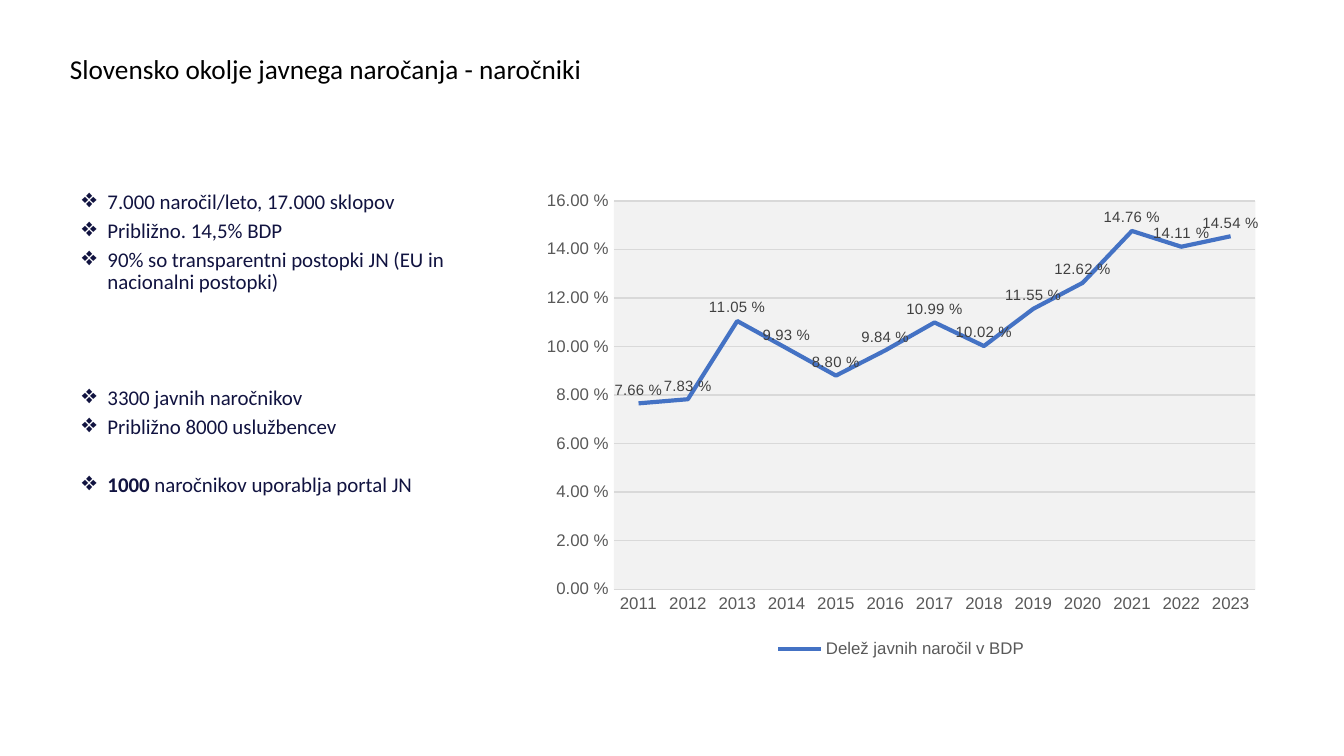
"""Build a slide on Slovenian public procurement with bullets and a line chart."""
from dataclasses import dataclass

from lxml import etree
from pptx import Presentation
from pptx.chart.data import CategoryChartData
from pptx.dml.color import RGBColor
from pptx.enum.chart import XL_CHART_TYPE, XL_LABEL_POSITION, XL_LEGEND_POSITION, XL_MARKER_STYLE, XL_TICK_MARK
from pptx.enum.text import MSO_ANCHOR
from pptx.oxml import parse_xml
from pptx.oxml.ns import nsdecls, qn
from pptx.util import Inches, Pt

LINE = XL_CHART_TYPE.LINE
ABOVE = XL_LABEL_POSITION.ABOVE
BOTTOM = XL_LEGEND_POSITION.BOTTOM
NO_MARKER = XL_MARKER_STYLE.NONE
NO_TICK = XL_TICK_MARK.NONE
TOP = MSO_ANCHOR.TOP

BLACK = RGBColor(0x00, 0x00, 0x00)
NAVY = RGBColor(0x11, 0x13, 0x40)
BLUE = RGBColor(0x44, 0x72, 0xC4)
LABEL_GREY = RGBColor(0x40, 0x40, 0x40)
AXIS_GREY = RGBColor(0x59, 0x59, 0x59)
GRID_GREY = RGBColor(0xD9, 0xD9, 0xD9)
PLOT_GREY = RGBColor(0xF2, 0xF2, 0xF2)

WIDTH = Inches(10)
HEIGHT = WIDTH * 9 // 16
PERCENT = "0.00\\ %"
LINE_PITCH = 15.5
SPACING = 1.7


@dataclass(frozen=True)
class Box:
    """Position and size in percent of the slide."""
    left: float
    top: float
    width: float
    height: float

    def emu(self) -> tuple[int, int, int, int]:
        """Return left, top, width and height in EMU."""
        return (int(WIDTH * self.left / 100), int(HEIGHT * self.top / 100),
                int(WIDTH * self.width / 100), int(HEIGHT * self.height / 100))


@dataclass(frozen=True)
class Bullet:
    """A bullet with an optional bold lead and a gap above in lines."""
    text: str
    lead: str = ""
    gap: int = 0


TITLE_BOX = Box(4.6, 6.93, 58.1, 8.71)
BODY_BOX = Box(5.5, 24.8, 33.4, 66.13)
CHART_BOX = Box(39.6, 24, 54.9, 63.82)

TITLE = "Slovensko okolje javnega naročanja - naročniki"
BULLETS = [
    Bullet("7.000 naročil/leto, 17.000 sklopov"),
    Bullet("Približno. 14,5% BDP"),
    Bullet("90% so transparentni postopki JN (EU in nacionalni postopki)"),
    Bullet("3300 javnih naročnikov", gap=3),
    Bullet("Približno 8000 uslužbencev"),
    Bullet("naročnikov uporablja portal JN", lead="1000 ", gap=1),
]
SERIES = "Delež javnih naročil v BDP"
YEARS = [str(year) for year in range(2011, 2024)]
SHARES = [0.0766, 0.0783, 0.1105, 0.0993, 0.088, 0.0984, 0.1099,
          0.1002, 0.1155, 0.1262, 0.1476, 0.1411, 0.1454]


def style_font(font, name: str, size: float, color: RGBColor) -> None:
    """Set typeface, size and colour of a font."""
    font.name, font.size = name, Pt(size)
    font.color.rgb = color


def add_text_frame(s, box: Box):
    """Add a wrapping text box and return its frame."""
    tf = s.shapes.add_textbox(*box.emu()).text_frame
    tf.word_wrap = True
    tf.vertical_anchor = TOP
    tf.margin_left = tf.margin_right = Inches(0.06)
    tf.margin_top = tf.margin_bottom = Inches(0.03)
    return tf


def add_run(p, text: str, size: float, color: RGBColor, bold: bool = False) -> None:
    """Add one Calibri run to a paragraph."""
    r = p.add_run()
    r.text = text
    style_font(r.font, "Calibri", size, color)
    r.font.bold = bold


def add_title(s) -> None:
    """Add the slide title."""
    p = add_text_frame(s, TITLE_BOX).paragraphs[0]
    p.line_spacing = 0.9
    add_run(p, TITLE, 14.6, BLACK)


def add_bullets(s, bullets: list[Bullet]) -> None:
    """Add the bullet list."""
    tf = add_text_frame(s, BODY_BOX)
    for i, bullet in enumerate(bullets):
        p = tf.add_paragraph() if i else tf.paragraphs[0]
        p.line_spacing = 0.9
        p.space_before = Pt(SPACING + bullet.gap * LINE_PITCH)
        p.space_after = Pt(SPACING)
        pPr = p._p.get_or_add_pPr()
        pPr.set("marL", str(Inches(0.19)))
        pPr.set("indent", str(-Inches(0.19)))
        etree.SubElement(pPr, qn("a:buSzPct")).set("val", "125000")
        etree.SubElement(pPr, qn("a:buChar")).set("char", "❖")
        if bullet.lead:
            add_run(p, bullet.lead, 11.2, NAVY, bold=True)
        add_run(p, bullet.text, 11.2, NAVY)


def style_axis(axis) -> None:
    """Remove tick marks and set the label font of an axis."""
    axis.major_tick_mark = axis.minor_tick_mark = NO_TICK
    style_font(axis.tick_labels.font, "Arial", 9, AXIS_GREY)


def style_line(line, color: RGBColor, width: float) -> None:
    """Set colour and width of a line."""
    line.color.rgb = color
    line.width = Pt(width)


def add_share_chart(s) -> None:
    """Add the line chart of procurement as a share of GDP."""
    data = CategoryChartData(number_format=PERCENT)
    data.categories = YEARS
    data.add_series(SERIES, SHARES)
    chart = s.shapes.add_chart(LINE, *CHART_BOX.emu(), data).chart
    style_font(chart.font, "Arial", 9, BLACK)
    chart.has_title = False
    chart.has_legend = True
    chart.legend.position = BOTTOM
    chart.legend.include_in_layout = False
    style_font(chart.legend.font, "Arial", 9, AXIS_GREY)

    years, values = chart.category_axis, chart.value_axis
    for axis in (years, values):
        style_axis(axis)
    style_line(years.format.line, GRID_GREY, 0.75)
    values.format.line.fill.background()
    style_line(values.major_gridlines.format.line, GRID_GREY, 0.75)
    values.minimum_scale, values.maximum_scale, values.major_unit = 0, 0.16, 0.02
    values.tick_labels.number_format = PERCENT
    values.tick_labels.number_format_is_linked = False

    plot = chart.plots[0]
    plot.vary_by_categories = False
    series = plot.series[0]
    series.smooth = False
    series.marker.style = NO_MARKER
    style_line(series.format.line, BLUE, 2.25)
    labels = series.data_labels
    labels.show_value = True
    labels.position = ABOVE
    labels.number_format = PERCENT
    labels.number_format_is_linked = False
    style_font(labels.font, "Arial", 8, LABEL_GREY)

    chart.element.find(".//" + qn("c:plotArea")).append(parse_xml(
        f'<c:spPr {nsdecls("c", "a")}><a:solidFill><a:srgbClr val="{PLOT_GREY}"/>'
        '</a:solidFill><a:ln><a:noFill/></a:ln></c:spPr>'))


def main() -> None:
    """Build and save the slide."""
    prs = Presentation()
    prs.slide_width, prs.slide_height = WIDTH, HEIGHT
    s = prs.slides.add_slide(prs.slide_layouts[6])
    add_title(s)
    add_bullets(s, BULLETS)
    add_share_chart(s)
    prs.save("out.pptx")


if __name__ == "__main__":
    main()
